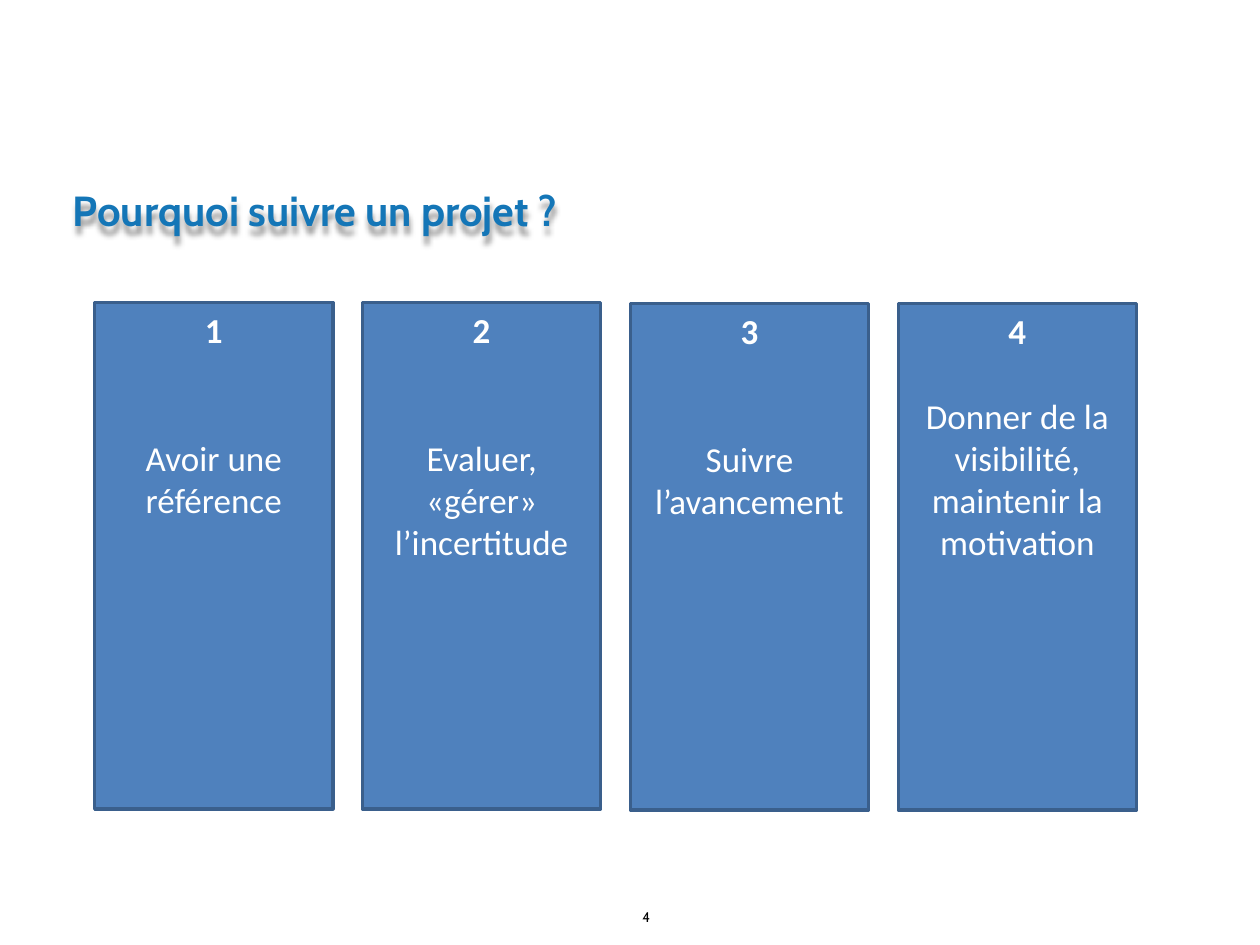
from lxml.etree import SubElement
from pptx import Presentation
from pptx.dml.color import RGBColor
from pptx.enum.shapes import MSO_SHAPE
from pptx.enum.text import MSO_ANCHOR, PP_ALIGN
from pptx.oxml.ns import qn
from pptx.util import Cm, Pt

TITLE_BLUE = RGBColor(0x14, 0x76, 0xB7)
CARD_BLUE = RGBColor(0x4F, 0x81, 0xBD)
CARD_EDGE = RGBColor(0x3A, 0x5F, 0x8C)
WHITE = RGBColor(0xFF, 0xFF, 0xFF)
BLACK = RGBColor(0, 0, 0)

CARD_LEFT, CARD_WIDTH, CARD_HEIGHT = 1.91, 4.8, 10.21
CARD_STEP = 5.4
LINE_HEIGHT = 24.4  # points, for Calibri at 20 pt

# top in cm, reason, lines left free under the number
REASONS = [
    (6.1, "Avoir une référence", 2),
    (6.1, "Evaluer, «gérer» l’incertitude", 2),
    (6.12, "Suivre l’avancement", 2),
    (6.12, "Donner de la visibilité, maintenir la motivation", 1),
]


def write_text(para, text, *, size, color, font="Calibri", bold=False,
               align=PP_ALIGN.LEFT, before=0):
    para.alignment = align
    if before:
        para.space_before = Pt(before)
    span = para.add_run()
    span.text = text
    span.font.name = font
    span.font.size = Pt(size)
    span.font.bold = bold
    span.font.color.rgb = color


def add_text_box(page, left, top, width, height, text, *, inset=None, **text_format):
    box = page.shapes.add_textbox(Cm(left), Cm(top), Cm(width), Cm(height))
    frame = box.text_frame
    frame.word_wrap = True
    if inset is not None:
        frame.margin_left = frame.margin_right = Cm(inset)
        frame.margin_top = frame.margin_bottom = Cm(inset)
    write_text(frame.paragraphs[0], text, **text_format)
    return box


def add_soft_shadow(box):
    """Drop a blurred grey shadow straight below the letters of a box."""
    effects = SubElement(box.element.spPr, qn("a:effectLst"))
    shadow = SubElement(effects, qn("a:outerShdw"), blurRad="38100",
                        dist="50800", dir="5400000", rotWithShape="0")
    color = SubElement(shadow, qn("a:srgbClr"), val="000000")
    SubElement(color, qn("a:alpha"), val="40000")


def add_card(page, number, top, reason, free_lines):
    left = CARD_LEFT + (number - 1) * CARD_STEP
    card = page.shapes.add_shape(MSO_SHAPE.RECTANGLE, Cm(left), Cm(top),
                                 Cm(CARD_WIDTH), Cm(CARD_HEIGHT))
    card.shadow.inherit = False
    card.fill.solid()
    card.fill.fore_color.rgb = CARD_BLUE
    card.line.color.rgb = CARD_EDGE
    card.line.width = Pt(2)
    frame = card.text_frame
    frame.word_wrap = True
    frame.vertical_anchor = MSO_ANCHOR.TOP
    card_format = {"size": 20, "color": WHITE, "align": PP_ALIGN.CENTER}
    write_text(frame.paragraphs[0], str(number), bold=True, **card_format)
    write_text(frame.add_paragraph(), reason,
               before=free_lines * LINE_HEIGHT, **card_format)


def main():
    deck = Presentation()
    deck.slide_width, deck.slide_height = Cm(25.4), Cm(19.05)
    page = deck.slides.add_slide(deck.slide_layouts[6])

    title = add_text_box(page, 1.09, 3.12, 24.74, 2.21, "Pourquoi suivre un projet ?",
                         inset=0.38, size=24, color=TITLE_BLUE, font="Cabin", bold=True)
    title.text_frame.vertical_anchor = MSO_ANCHOR.MIDDLE
    add_soft_shadow(title)
    add_text_box(page, 12.7, 18.19, 8.31, 0.61, "4",
                 size=8, color=BLACK, font="Cabin")
    for number, (top, reason, free_lines) in enumerate(REASONS, start=1):
        add_card(page, number, top, reason, free_lines)

    deck.save("out.pptx")


if __name__ == "__main__":
    main()
